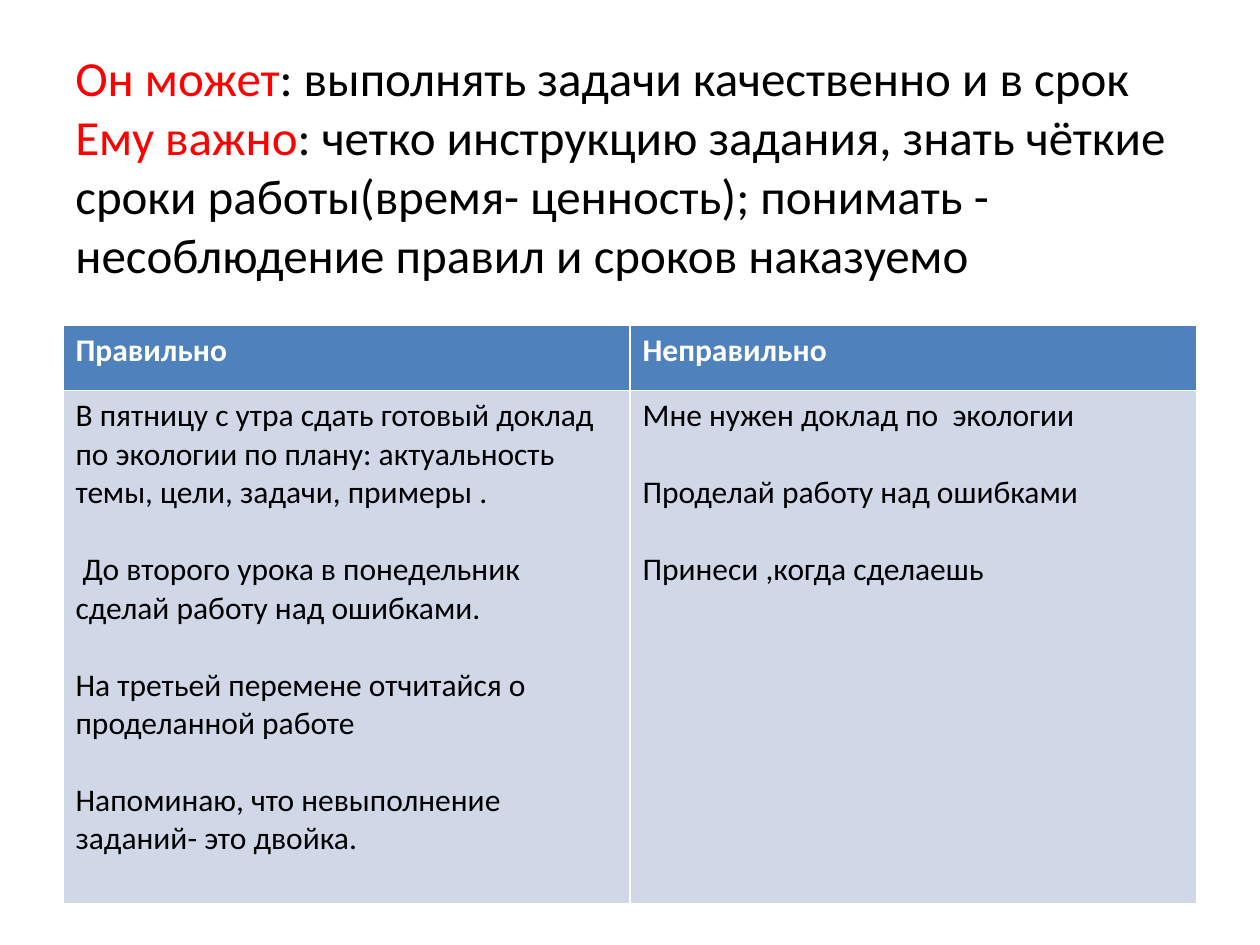
import pptx
import pptx.util
import pptx.dml.color
import pptx.enum.text
from pptx.util import Inches

RED = pptx.dml.color.RGBColor(0xFF, 0x00, 0x00)
BLACK = pptx.dml.color.RGBColor(0x00, 0x00, 0x00)
WHITE = pptx.dml.color.RGBColor(0xFF, 0xFF, 0xFF)
BLUE = pptx.dml.color.RGBColor(0x4F, 0x81, 0xBD)
PALE_BLUE = pptx.dml.color.RGBColor(0xD0, 0xD8, 0xE8)

TITLE = [
    ("Он может", ": выполнять задачи качественно и в срок"),
    ("Ему важно", ": четко инструкцию задания, знать чёткие сроки "
     "работы(время- ценность); понимать - несоблюдение правил и сроков наказуемо"),
]
COLUMNS = {
    "Правильно": [
        "В пятницу с утра сдать готовый доклад по экологии по плану: "
        "актуальность темы, цели, задачи, примеры .",
        " До второго урока в понедельник сделай работу над ошибками.",
        "На третьей перемене отчитайся о проделанной работе",
        "Напоминаю, что невыполнение заданий- это двойка.",
    ],
    "Неправильно": [
        "Мне нужен доклад по  экологии",
        "Проделай работу над ошибками",
        "Принеси ,когда сделаешь",
    ],
}
HEADER_FORMAT = {"size": pptx.util.Pt(18), "bold": True}
BODY_FORMAT = {"size": pptx.util.Pt(18), "bold": False}
PARAGRAPH_GAP = pptx.util.Pt(22)


def add_run(p, text, color, font_format):
    r = p.add_run()
    r.text = text
    r.font.name = "Calibri"
    r.font.color.rgb = color
    for name, value in font_format.items():
        setattr(r.font, name, value)


def fill_cell(cell, paragraphs, fill, color, font_format):
    cell.fill.solid()
    cell.fill.fore_color.rgb = fill
    tf = cell.text_frame
    for i, text in enumerate(paragraphs):
        p = tf.add_paragraph() if i else tf.paragraphs[0]
        if i:
            p.space_before = PARAGRAPH_GAP
        add_run(p, text, color, font_format)


prs = pptx.Presentation()
prs.slide_width, prs.slide_height = Inches(10), Inches(7.5)
s = prs.slides.add_slide(prs.slide_layouts[6])

# Title
tf = s.shapes.add_textbox(Inches(0.5), Inches(0.3), Inches(9), Inches(2.03)).text_frame
tf.word_wrap = True
tf.vertical_anchor = pptx.enum.text.MSO_ANCHOR.MIDDLE
p = tf.paragraphs[0]
for i, (lead, rest) in enumerate(TITLE):
    if i:
        p.add_line_break()
    add_run(p, lead, RED, {"size": pptx.util.Pt(28)})
    add_run(p, rest, BLACK, {"size": pptx.util.Pt(28)})

# Table of right and wrong instructions
table = s.shapes.add_table(2, len(COLUMNS), Inches(0.5), Inches(2.58),
                           Inches(9), Inches(4.59)).table
for row, height in zip(table.rows, (0.52, 4.07)):
    row.height = Inches(height)
for col, (heading, examples) in enumerate(COLUMNS.items()):
    table.columns[col].width = Inches(4.5)
    fill_cell(table.cell(0, col), [heading], BLUE, WHITE, HEADER_FORMAT)
    fill_cell(table.cell(1, col), examples, PALE_BLUE, BLACK, BODY_FORMAT)

prs.save("out.pptx")
